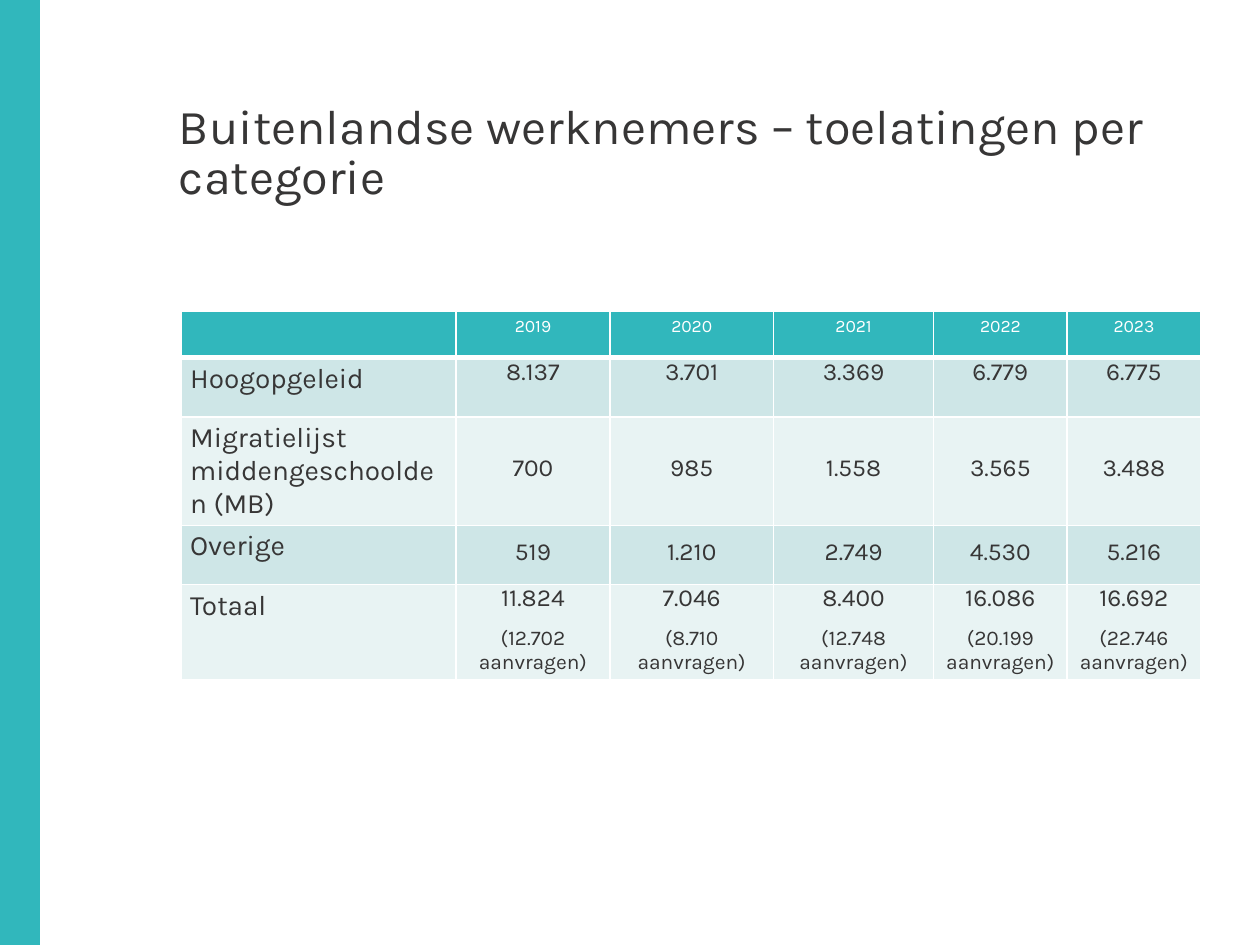
from lxml import etree
from pptx import Presentation
from pptx import util as u
from pptx.dml.color import RGBColor
from pptx.enum import shapes, text
from pptx.oxml.ns import qn

COLORS = {"teal": "31B7BC", "ink": "373636", "white": "FFFFFF",
          "band": "CEE6E7", "pale": "E8F3F3"}
FONT = "Karla"
LEFT, CENTER = text.PP_ALIGN.LEFT, text.PP_ALIGN.CENTER
TOP, MIDDLE = text.MSO_ANCHOR.TOP, text.MSO_ANCHOR.MIDDLE

YEARS = ["2019", "2020", "2021", "2022", "2023"]
CATEGORIES = [
    ("Hoogopgeleid", ["8.137", "3.701", "3.369", "6.779", "6.775"], TOP),
    ("Migratielijst middengeschoolden (MB)",
     ["700", "985", "1.558", "3.565", "3.488"], MIDDLE),
    ("Overige", ["519", "1.210", "2.749", "4.530", "5.216"], MIDDLE),
]
TOTALS = ["11.824", "7.046", "8.400", "16.086", "16.692"]
REQUESTS = ["12.702", "8.710", "12.748", "20.199", "22.746"]
COLUMN_WIDTHS = [2.18, 1.22, 1.3, 1.27, 1.06, 1.06]
ROW_HEIGHTS = [0.37, 0.47, 0.77, 0.47, 0.47]
FIGURE_FORMAT = {"alignment": CENTER, "line_spacing": u.Pt(13.5),
                 "space_after": u.Pt(8)}


def rgb(name):
    return RGBColor.from_string(COLORS[name])


def apply(target, values):
    for key, value in values.items():
        setattr(target, key, value)


class SlideBuilder:
    def __init__(self, deck):
        self.page = deck.slides.add_slide(deck.slide_layouts[5])

    def add_words(self, para, words, size, color="ink", **values):
        apply(para, values)
        span = para.add_run()
        span.text = words
        apply(span.font, {"name": FONT, "size": u.Pt(size)})
        span.font.color.rgb = rgb(color)

    def bar(self, left, top, width, height):
        box = self.page.shapes.add_shape(
            shapes.MSO_SHAPE.RECTANGLE, *map(u.Inches, (left, top, width, height)))
        box.shadow.inherit = False
        box.fill.solid()
        box.fill.fore_color.rgb = rgb("teal")
        box.line.color.rgb = rgb("teal")
        box.line.width = u.Pt(1)

    def title(self, words, left, top, width, height):
        box = self.page.shapes.title
        apply(box, {"left": u.Inches(left), "top": u.Inches(top),
                    "width": u.Inches(width), "height": u.Inches(height)})
        frame = box.text_frame
        apply(frame, {"margin_left": 0, "margin_right": 0, "margin_top": 0,
                      "margin_bottom": 0, "vertical_anchor": TOP,
                      "word_wrap": True, "auto_size": text.MSO_AUTO_SIZE.NONE})
        self.add_words(frame.paragraphs[0], words, 27.8, alignment=LEFT,
                       line_spacing=u.Pt(28.5))

    def table(self, left, top):
        frame = self.page.shapes.add_table(
            len(ROW_HEIGHTS), len(COLUMN_WIDTHS), u.Inches(left), u.Inches(top),
            u.Inches(sum(COLUMN_WIDTHS)), u.Inches(sum(ROW_HEIGHTS)))
        grid = frame.table
        for column, width in zip(grid.columns, COLUMN_WIDTHS):
            column.width = u.Inches(width)
        for row, height in zip(grid.rows, ROW_HEIGHTS):
            row.height = u.Inches(height)
        return grid

    def cell(self, cell, lines, fill, color="ink", anchor=TOP, **values):
        """Fill a cell with (words, size) lines, one paragraph each."""
        side, edge = (0.04, 0) if anchor == MIDDLE else (0.07, 0.04)
        apply(cell, {"margin_left": u.Inches(side), "margin_right": u.Inches(side),
                     "margin_top": u.Inches(edge), "margin_bottom": u.Inches(edge),
                     "vertical_anchor": anchor})
        frame = cell.text_frame
        for index, (words, size) in enumerate(lines):
            para = frame.add_paragraph() if index else frame.paragraphs[0]
            self.add_words(para, words, size, color, **values)
        self.borders(cell, 3 if fill == "teal" else 1)
        cell.fill.solid()
        cell.fill.fore_color.rgb = rgb(fill)

    def borders(self, cell, bottom):
        props = cell._tc.get_or_add_tcPr()
        for tag, width in (("lnL", 1), ("lnR", 1), ("lnT", 1), ("lnB", bottom)):
            line = etree.SubElement(props, qn(f"a:{tag}"), w=str(u.Pt(width)))
            paint = etree.SubElement(line, qn("a:solidFill"))
            etree.SubElement(paint, qn("a:srgbClr"), val=COLORS["white"])


def main():
    deck = Presentation()
    deck.slide_width, deck.slide_height = u.Inches(10), u.Inches(7.5)
    slide = SlideBuilder(deck)
    slide.bar(0, 0, 0.31, 7.5)
    slide.title("Buitenlandse werknemers – toelatingen per categorie",
                1.42, 0.83, 8.11, 1.22)

    grid = slide.table(1.44, 2.47)
    for column, year in enumerate([""] + YEARS):
        slide.cell(grid.cell(0, column), [(year, 10)], "teal", "white",
                   alignment=CENTER)

    rows = [(label, [[(figure, 14)] for figure in figures], anchor)
            for label, figures, anchor in CATEGORIES]
    rows.append(("Totaal", [[(total, 14), (f"({count} aanvragen)", 12)]
                            for total, count in zip(TOTALS, REQUESTS)], TOP))
    for row, (label, figures, anchor) in enumerate(rows, 1):
        fill = "band" if row % 2 else "pale"
        slide.cell(grid.cell(row, 0), [(label, 16)], fill)
        for column, lines in enumerate(figures, 1):
            slide.cell(grid.cell(row, column), lines, fill, anchor=anchor,
                       **FIGURE_FORMAT)
    deck.save("out.pptx")


if __name__ == "__main__":
    main()
